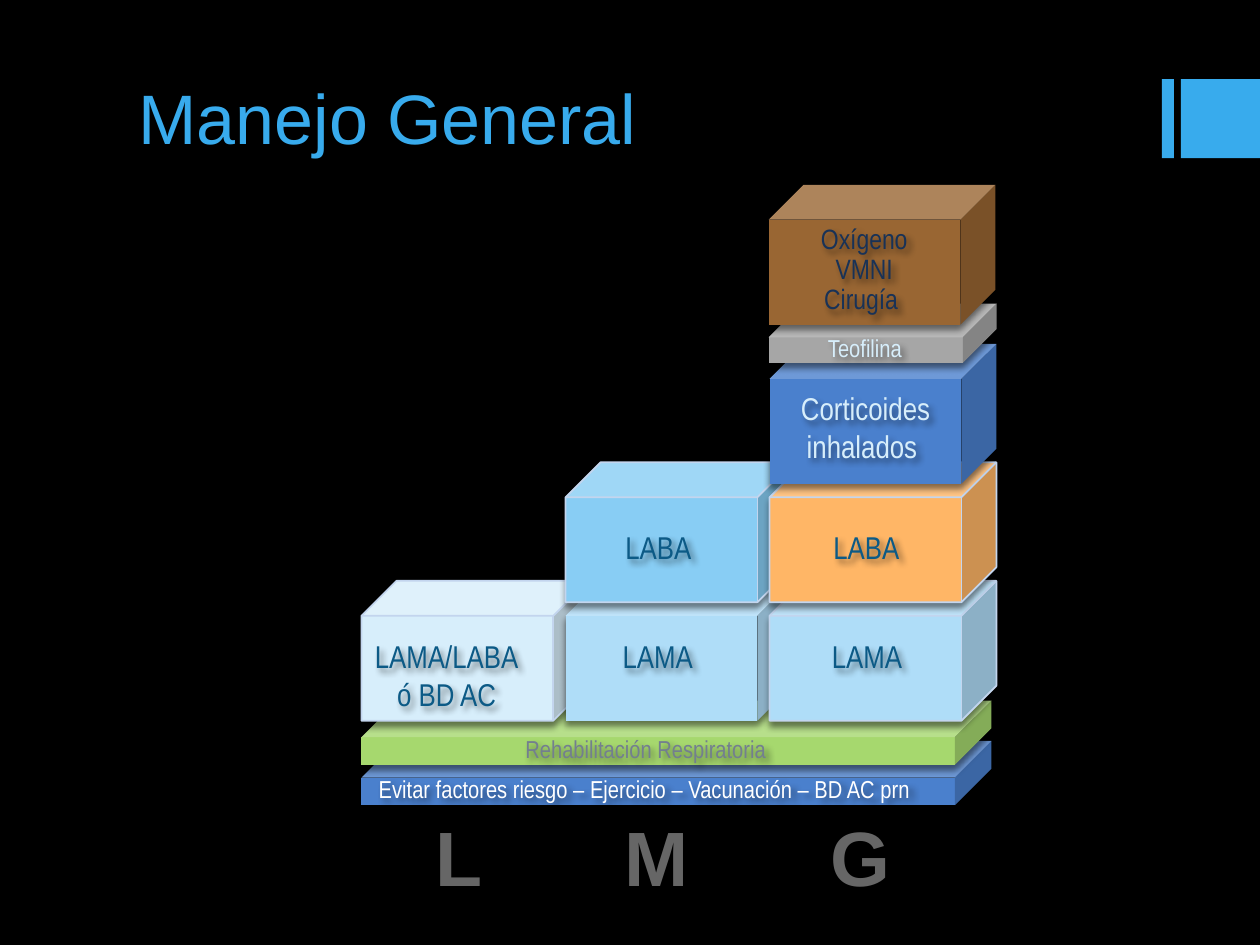
from dataclasses import dataclass
from typing import Optional

import pptx
import pptx.dml.color
import pptx.enum.shapes
import pptx.enum.text
import pptx.oxml
import pptx.oxml.ns
import pptx.util

Pt = pptx.util.Pt
RGBColor = pptx.dml.color.RGBColor
MSO_SHAPE = pptx.enum.shapes.MSO_SHAPE
PP_ALIGN = pptx.enum.text.PP_ALIGN
MSO_ANCHOR = pptx.enum.text.MSO_ANCHOR
MSO_AUTO_SIZE = pptx.enum.text.MSO_AUTO_SIZE

BLACK = RGBColor(0x00, 0x00, 0x00)
WHITE = RGBColor(0xFF, 0xFF, 0xFF)
ACCENT = RGBColor(0x38, 0xAB, 0xED)
BLUE = RGBColor(0x4A, 0x80, 0xCD)
SKY = RGBColor(0x88, 0xCD, 0xF4)
LIGHT_SKY = RGBColor(0xAF, 0xDD, 0xF8)
PALE_SKY = RGBColor(0xD7, 0xEE, 0xFB)
GREEN = RGBColor(0xA6, 0xD8, 0x6E)
ORANGE = RGBColor(0xFF, 0xB6, 0x66)
BROWN = RGBColor(0x99, 0x66, 0x33)
GREY = RGBColor(0xA6, 0xA6, 0xA6)
EDGE = RGBColor(0xC3, 0xD5, 0xEE)
DEEP_BLUE = RGBColor(0x0C, 0x5A, 0x86)
NAVY = RGBColor(0x18, 0x32, 0x57)
SLATE = RGBColor(0x73, 0x7F, 0x8F)
LETTER_GREY = RGBColor(0x66, 0x66, 0x66)

COLUMNS = [206.6 + 116.6 * index for index in range(3)]
ROWS = [331.9 - 67.7 * index for index in range(3)]
CUBE_WIDTH, CUBE_HEIGHT = 129.6, 79.9
BAR_WIDTH, BAR_HEIGHT = 360, 36.7
FLAT_DEPTH = 0.57


@dataclass
class Label:
    text: str
    left: float
    top: float
    width: float
    height: float
    color: RGBColor
    size: float = 18
    font: str = "Arial Narrow"
    bold: bool = False
    line_spacing: Optional[float] = None
    anchor: MSO_ANCHOR = MSO_ANCHOR.TOP
    shadow: bool = True


@dataclass
class Block:
    left: float
    top: float
    fill: RGBColor
    label: Label
    width: float = CUBE_WIDTH
    height: float = CUBE_HEIGHT
    depth: float = 0.25
    outlined: bool = False


BLOCKS = [
    Block(COLUMNS[0], 423.4, BLUE,
          Label("Evitar factores riesgo – Ejercicio – Vacunación – BD AC prn ",
                208.1, 438.5, 320.4, 24.5, WHITE, 14),
          BAR_WIDTH, BAR_HEIGHT, FLAT_DEPTH),
    Block(COLUMNS[0], 400.3, GREEN,
          Label("Rehabilitación Respiratoria ", 292.3, 416, 153.4, 24.5, SLATE, 14),
          BAR_WIDTH, BAR_HEIGHT, FLAT_DEPTH),
    Block(COLUMNS[0], ROWS[0], PALE_SKY,
          Label("LAMA/LABA\nó BD AC", 206.6, 360.7, 97.2, 51.1, DEEP_BLUE), outlined=True),
    Block(COLUMNS[1], ROWS[0], LIGHT_SKY,
          Label("LAMA ", 348.5, 360.7, 54, 28.8, DEEP_BLUE)),
    Block(COLUMNS[1], ROWS[1], SKY,
          Label("LABA ", 349.9, 298.1, 51.8, 28.8, DEEP_BLUE), outlined=True),
    Block(COLUMNS[2], ROWS[0], LIGHT_SKY,
          Label("LAMA ", 468, 360.7, 54, 28.8, DEEP_BLUE), outlined=True),
    Block(COLUMNS[2], ROWS[1], ORANGE,
          Label("LABA ", 468.7, 298.1, 51.8, 28.8, DEEP_BLUE), outlined=True),
    Block(COLUMNS[2], ROWS[2], BLUE,
          Label("Corticoides \ninhalados ", 450, 218.9, 89.3, 51.1, PALE_SKY)),
    Block(439.2, 173.5, GREY,
          Label("Teofilina ", 465.8, 186.5, 56.9, 24.5, PALE_SKY, 14),
          130.3, 33.8, FLAT_DEPTH),
    Block(439.2, 105.6, BROWN,
          Label("Oxígeno\nVMNI\nCirugía ", 461.5, 125.3, 64.8, 59.8, NAVY, 16,
                line_spacing=0.9)),
]

SEVERITY_LETTERS = [("L", 241.9, 33.1), ("M", 348.5, 53.3), ("G", 467.3, 43.2)]


def add_shadow(shape, direction: int) -> None:
    """Cast a soft black shadow; direction is in degrees, clockwise from the right."""
    shape.shadow.inherit = False
    effects = shape._element.spPr.find(pptx.oxml.ns.qn("a:effectLst"))
    effects.append(pptx.oxml.parse_xml(
        f'<a:outerShdw {pptx.oxml.ns.nsdecls("a")} blurRad="{Pt(3.8)}" dist="{Pt(3)}" '
        f'dir="{direction * 60000}" rotWithShape="0"><a:srgbClr val="000000">'
        '<a:alpha val="48000"/></a:srgbClr></a:outerShdw>'))


def add_label(shapes, label: Label) -> None:
    box = shapes.add_textbox(Pt(label.left), Pt(label.top), Pt(label.width), Pt(label.height))
    frame = box.text_frame
    frame.text = label.text
    frame.word_wrap = False
    frame.auto_size = MSO_AUTO_SIZE.SHAPE_TO_FIT_TEXT
    frame.vertical_anchor = label.anchor
    for paragraph in frame.paragraphs:
        paragraph.alignment = PP_ALIGN.CENTER
        paragraph.line_spacing = label.line_spacing
        for run in paragraph.runs:
            run.font.name = label.font
            run.font.size = Pt(label.size)
            run.font.bold = label.bold
            run.font.color.rgb = label.color
    if label.shadow:
        add_shadow(box, 45)


def add_block(slide, block: Block) -> None:
    group = slide.shapes.add_group_shape()
    cube = group.shapes.add_shape(MSO_SHAPE.CUBE, Pt(block.left), Pt(block.top),
                                  Pt(block.width), Pt(block.height))
    cube.adjustments[0] = block.depth
    cube.fill.solid()
    cube.fill.fore_color.rgb = block.fill
    if block.outlined:
        cube.line.color.rgb = EDGE
        cube.line.width = Pt(1)
    else:
        cube.line.fill.background()
    add_shadow(cube, 90)
    add_label(group.shapes, block.label)


def add_accent_bar(slide, left: float, width: float) -> None:
    bar = slide.shapes.add_shape(MSO_SHAPE.RECTANGLE, Pt(left), Pt(45.2), Pt(width), Pt(45.2))
    bar.shadow.inherit = False
    bar.fill.solid()
    bar.fill.fore_color.rgb = ACCENT
    bar.line.fill.background()


def set_title(slide, text: str) -> None:
    title = slide.shapes.title
    title.left, title.top, title.width, title.height = Pt(72), Pt(3.6), Pt(576), Pt(90.7)
    title.text_frame.text = text
    title.text_frame.vertical_anchor = MSO_ANCHOR.BOTTOM
    paragraph = title.text_frame.paragraphs[0]
    paragraph.alignment = PP_ALIGN.LEFT
    font = paragraph.runs[0].font
    font.name = "Arial"
    font.size = Pt(40)
    font.color.rgb = ACCENT


def main() -> None:
    presentation = pptx.Presentation()
    presentation.slide_width, presentation.slide_height = Pt(720), Pt(540)
    slide = presentation.slides.add_slide(presentation.slide_layouts[5])
    slide.background.fill.solid()
    slide.background.fill.fore_color.rgb = BLACK

    set_title(slide, "Manejo General")
    add_accent_bar(slide, 664, 6.8)
    add_accent_bar(slide, 674.8, 45.2)
    for block in BLOCKS:
        add_block(slide, block)
    letters = slide.shapes.add_group_shape()
    for text, left, width in SEVERITY_LETTERS:
        add_label(letters.shapes, Label(text, left, 458.6, width, 60.5, LETTER_GREY, 44, "Arial",
                                        bold=True, anchor=MSO_ANCHOR.MIDDLE, shadow=False))
    presentation.save("out.pptx")


if __name__ == "__main__":
    main()
